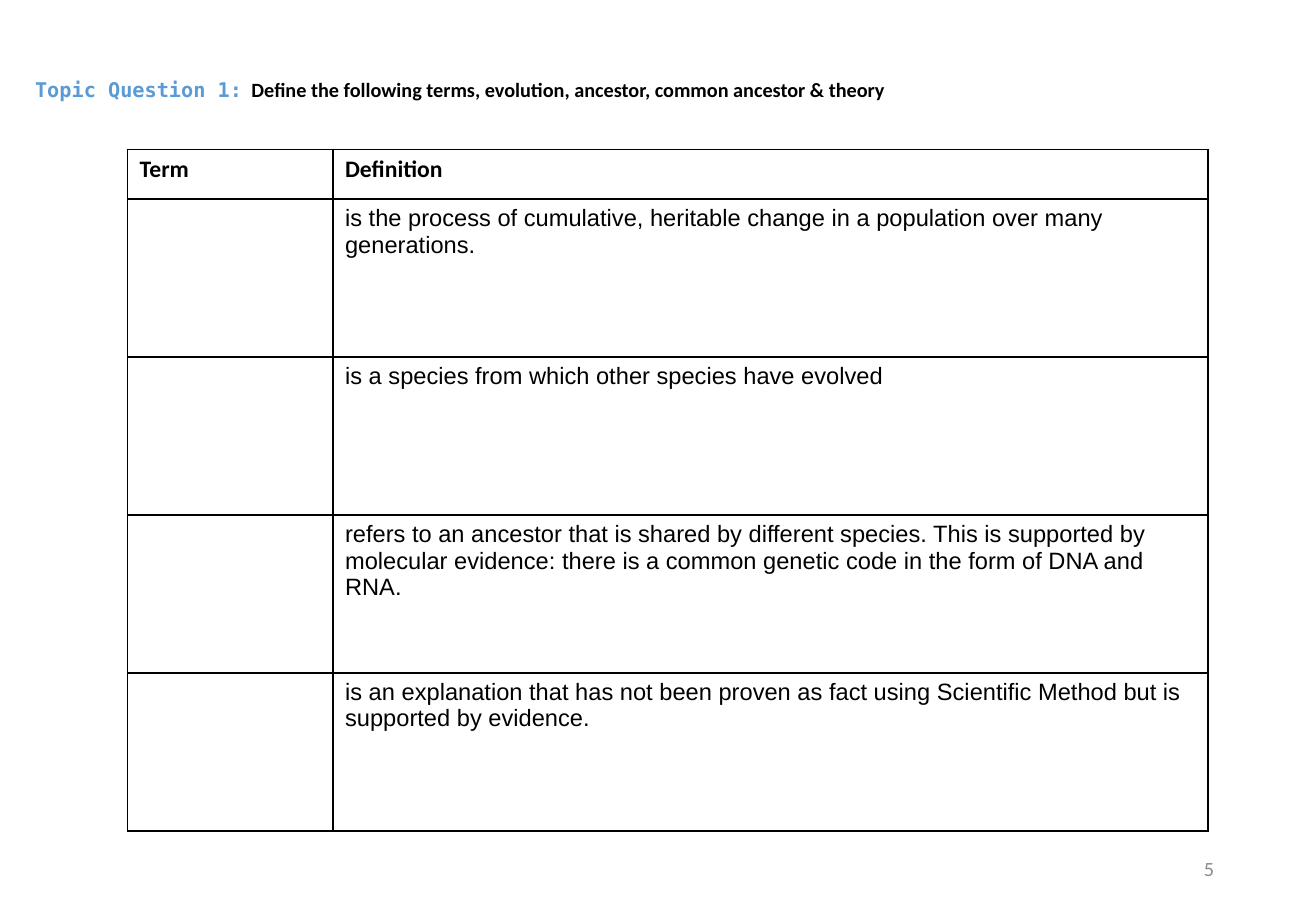
from pptx import Presentation
from pptx.dml.color import RGBColor as RGB
from pptx.enum.text import MSO_ANCHOR as ANCHOR, PP_ALIGN as ALIGN
from pptx.oxml import parse_xml
from pptx.oxml.ns import nsdecls
from pptx.util import Inches, Pt

THEME = {
    "black": "000000", "blue": "5B9BD5", "grey": "8C8C8C",
    "small": 12, "body": 14,
    "sans": "Calibri", "mono": "DejaVu Sans Mono", "plain": "Arial",
}


def add_run(p, text, font, size, color, bold=False):
    r = p.add_run()
    r.text = text
    r.font.name = THEME[font]
    r.font.size = Pt(THEME[size])
    r.font.bold = bold
    r.font.color.rgb = RGB.from_string(THEME[color])


def add_box(s, left, top, width, height):
    tf = s.shapes.add_textbox(Inches(left), Inches(top), Inches(width), Inches(height)).text_frame
    tf.word_wrap = True
    tf.vertical_anchor = ANCHOR.MIDDLE
    return tf.paragraphs[0]


prs = Presentation()
prs.slide_width, prs.slide_height = Inches(10.83), Inches(7.5)
s = prs.slides.add_slide(prs.slide_layouts[6])

p = add_box(s, 7.65, 6.95, 2.44, 0.4)
p.alignment = ALIGN.RIGHT
add_run(p, "5", "sans", "small", "grey")

p = add_box(s, 0.19, 0.37, 8.49, 0.75)
p.line_spacing = 0.9
add_run(p, "Topic Question 1:", "mono", "small", "blue", True)
add_run(p, "  Define the following terms, evolution, ancestor, common ancestor & theory",
        "sans", "small", "black", True)

rows = [
    ("Term", "Definition"),
    ("", "is the process of cumulative, heritable change in a population over many generations."),
    ("", "is a species from which other species have evolved"),
    ("", "refers to an ancestor that is shared by different species. This is supported by "
         "molecular evidence: there is a common genetic code in the form of DNA and RNA."),
    ("", "is an explanation that has not been proven as fact using Scientific Method but is "
         "supported by evidence."),
]
table = s.shapes.add_table(len(rows), 2, Inches(1.05), Inches(1.23), Inches(8.89), Inches(5.61)).table
table.first_row = table.horz_banding = False
table.columns[0].width, table.columns[1].width = Inches(1.69), Inches(7.2)

for i, row in enumerate(rows):
    header = i == 0
    table.rows[i].height = Inches(0.41 if header else 1.3)
    for j, text in enumerate(row):
        cell = table.cell(i, j)
        if text:
            add_run(cell.text_frame.paragraphs[0], text,
                    "sans" if header else "plain", "body", "black", header)
        tcPr = cell._tc.get_or_add_tcPr()
        for side in ("lnL", "lnR", "lnT", "lnB"):
            tcPr.append(parse_xml(
                f'<a:{side} {nsdecls("a")} w="{Pt(1)}"><a:solidFill>'
                f'<a:srgbClr val="{THEME["black"]}"/></a:solidFill></a:{side}>'))
        cell.fill.background()

prs.save("out.pptx")
